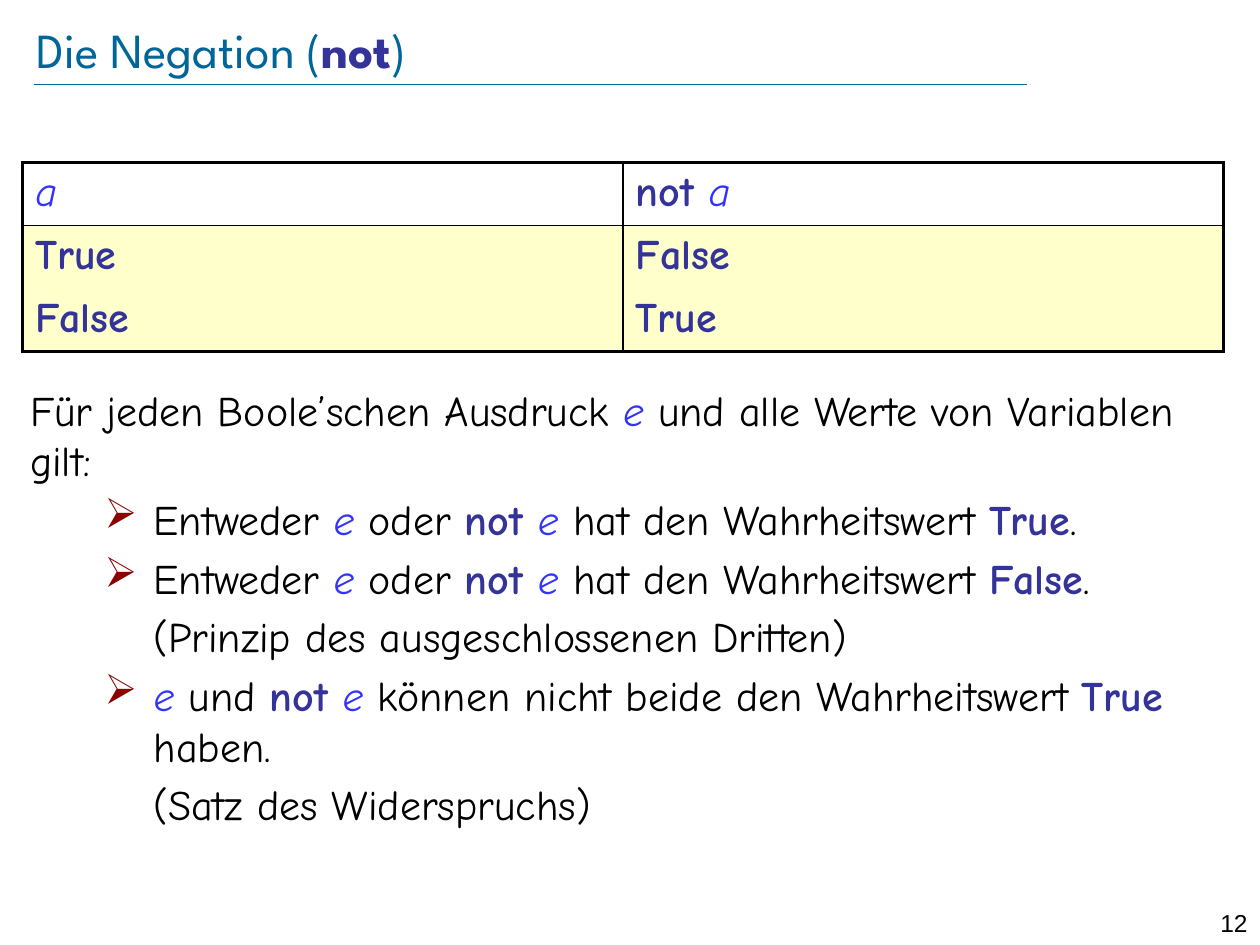
from lxml import etree
from pptx import Presentation, util as u
from pptx.dml.color import RGBColor
from pptx.enum import shapes, text
from pptx.oxml.ns import qn

WIDTH, HEIGHT = u.Inches(10), u.Inches(7.5)
TEAL = RGBColor(0x00, 0x66, 0x99)
BLACK = RGBColor(0x00, 0x00, 0x00)
VARIABLE_BLUE = RGBColor(0x33, 0x33, 0xFF)
KEYWORD_BLUE = RGBColor(0x33, 0x33, 0x99)
BULLET_RED = RGBColor(0x8B, 0x00, 0x00)
PALE_YELLOW = RGBColor(0xFF, 0xFF, 0xCC)

TITLE_FONT, BODY_FONT, NUMBER_FONT = "League Spartan", "Comic Neue", "Arial"
OUTER, INNER, NO_LINE = 2.25, 1, 0


def plain(words):
    return words, BLACK, False, False


def variable(name):
    return name, VARIABLE_BLUE, False, True


def keyword(word):
    return word, KEYWORD_BLUE, True, False


NOT, E = keyword("not "), variable("e")
TRUE, FALSE = keyword("True"), keyword("False")

TRUTH_TABLE = [
    [[variable("a")], [NOT, variable("a")]],
    [[TRUE], [FALSE]],
    [[FALSE], [TRUE]],
]
INTRO = [plain("Für jeden Boole’schen Ausdruck "), E,
         plain(" und alle Werte von Variablen gilt:")]


def either_law(value):
    return [plain("Entweder "), E, plain(" oder "), NOT, E,
            plain(" hat den Wahrheitswert "), value, plain(".")]


# Each law: its runs and whether it carries a bullet
LAWS = [
    (either_law(TRUE), True),
    (either_law(FALSE), True),
    ([plain("(Prinzip des ausgeschlossenen Dritten)")], False),
    ([E, plain(" und "), NOT, E,
      plain(" können nicht beide den Wahrheitswert "), TRUE,
      plain(" haben.")], True),
    ([plain("(Satz des Widerspruchs)")], False),
]


def write(paragraph, runs, font=BODY_FONT, size=24):
    paragraph.font.name = font
    paragraph.font.size = u.Pt(size)
    for words, color, bold, italic in runs:
        run = paragraph.add_run()
        run.text = words
        run.font.color.rgb = color
        run.font.bold = bold
        run.font.italic = italic


def indent(paragraph, bulleted):
    properties = paragraph._p.get_or_add_pPr()
    properties.set("marL", str(u.Inches(0.98)))
    properties.set("indent", str(u.Inches(-0.39) if bulleted else 0))
    if bulleted:
        bullet_color = etree.SubElement(properties, qn("a:buClr"))
        etree.SubElement(bullet_color, qn("a:srgbClr"), val=str(BULLET_RED))
        etree.SubElement(properties, qn("a:buChar"), char="➢")


def add_title(slide):
    title = slide.shapes.title
    title.left, title.top = u.Inches(0.29), u.Inches(0.13)
    title.width, title.height = u.Inches(8.96), u.Inches(0.51)
    frame = title.text_frame
    frame.margin_left = frame.margin_right = 0
    frame.margin_top = frame.margin_bottom = 0
    frame.vertical_anchor = text.MSO_ANCHOR.MIDDLE
    frame.auto_size = text.MSO_AUTO_SIZE.NONE
    heading = frame.paragraphs[0]
    heading.alignment = text.PP_ALIGN.LEFT
    write(heading, [("Die Negation (", TEAL, False, False), keyword("not"),
                    (")", TEAL, False, False)], TITLE_FONT, 28)


def add_title_rule(slide):
    y = u.Inches(0.67)
    rule = slide.shapes.add_connector(
        shapes.MSO_CONNECTOR.STRAIGHT, u.Inches(0.27), y, u.Inches(8.15), y)
    rule.line.color.rgb = TEAL
    rule.line.width = u.Pt(0.25)
    etree.SubElement(rule._element.spPr, qn("a:effectLst"))


def set_borders(cell, **widths):
    """Draw the sides L, R, T, B (in that order) in points; 0 hides a side."""
    properties = cell._tc.get_or_add_tcPr()
    for side, width in widths.items():
        line = etree.SubElement(properties, qn(f"a:ln{side}"),
                                w=str(u.Pt(width)))
        if width:
            fill = etree.SubElement(line, qn("a:solidFill"))
            etree.SubElement(fill, qn("a:srgbClr"), val=str(BLACK))
        else:
            etree.SubElement(line, qn("a:noFill"))


def add_truth_table(slide):
    rows, columns = len(TRUTH_TABLE), len(TRUTH_TABLE[0])
    table = slide.shapes.add_table(
        rows, columns, u.Inches(0.18), u.Inches(1.29),
        u.Inches(9.53), u.Inches(0.48 * rows)).table
    table.first_row = table.horz_banding = False
    row_lines = [OUTER, INNER, NO_LINE, OUTER]
    column_lines = [OUTER, INNER, OUTER]
    for r, row in enumerate(TRUTH_TABLE):
        for c, runs in enumerate(row):
            cell = table.cell(r, c)
            set_borders(cell, L=column_lines[c], R=column_lines[c + 1],
                        T=row_lines[r], B=row_lines[r + 1])
            if r == 0:
                cell.fill.background()
            else:
                cell.fill.solid()
                cell.fill.fore_color.rgb = PALE_YELLOW
            write(cell.text_frame.paragraphs[0], runs)


def add_laws(slide):
    frame = slide.shapes.add_textbox(
        u.Inches(0.14), u.Inches(3), u.Inches(9.69), u.Inches(3.98)).text_frame
    frame.word_wrap = True
    write(frame.paragraphs[0], INTRO)
    for runs, bulleted in LAWS:
        law = frame.add_paragraph()
        indent(law, bulleted)
        law.space_before = u.Pt(4.8)
        write(law, runs)


def add_page_number(slide):
    width, height = u.Inches(0.55), u.Inches(0.24)
    frame = slide.shapes.add_textbox(
        WIDTH - width, u.Inches(7.16), width, height).text_frame
    frame.word_wrap = True
    number = frame.paragraphs[0]
    number.alignment = text.PP_ALIGN.RIGHT
    write(number, [plain("12")], NUMBER_FONT, 14)


def main():
    deck = Presentation()
    deck.slide_width, deck.slide_height = WIDTH, HEIGHT
    slide = deck.slides.add_slide(deck.slide_layouts[5])
    add_title_rule(slide)
    add_page_number(slide)
    add_title(slide)
    add_laws(slide)
    add_truth_table(slide)
    deck.save("out.pptx")


if __name__ == "__main__":
    main()
